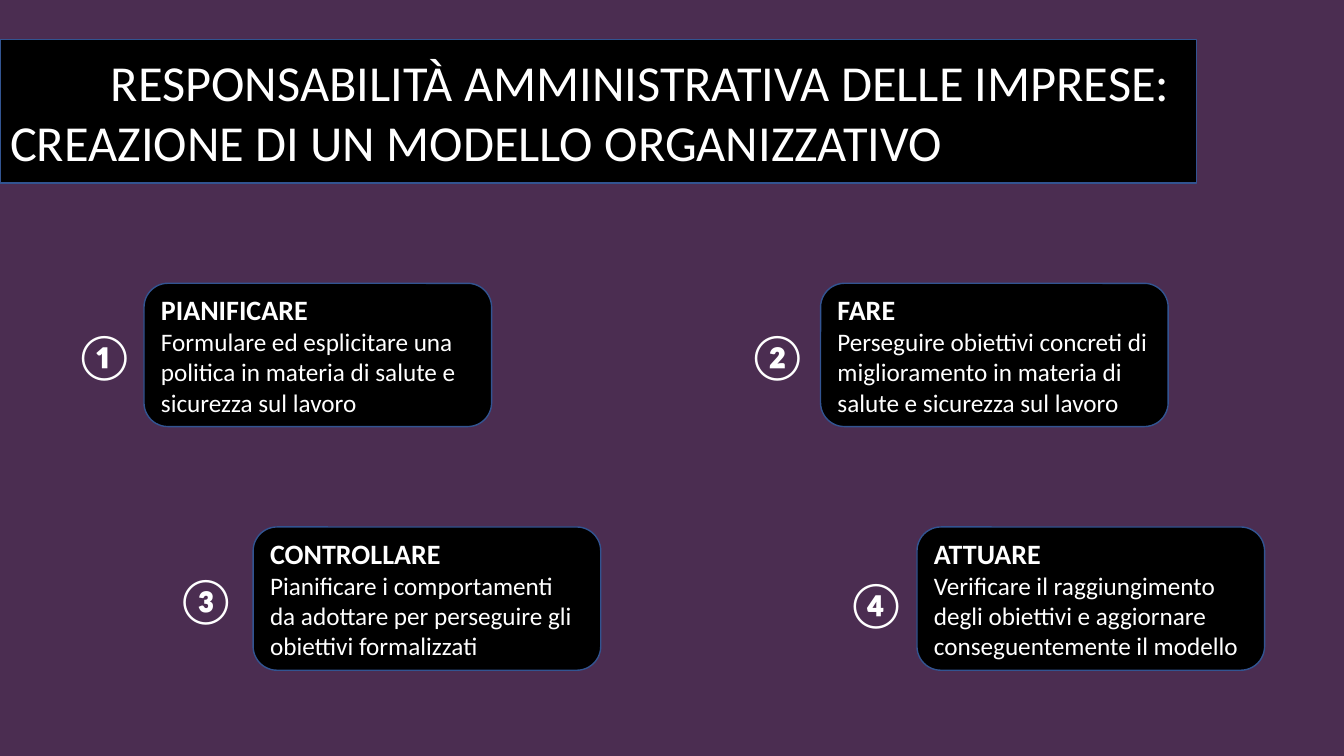
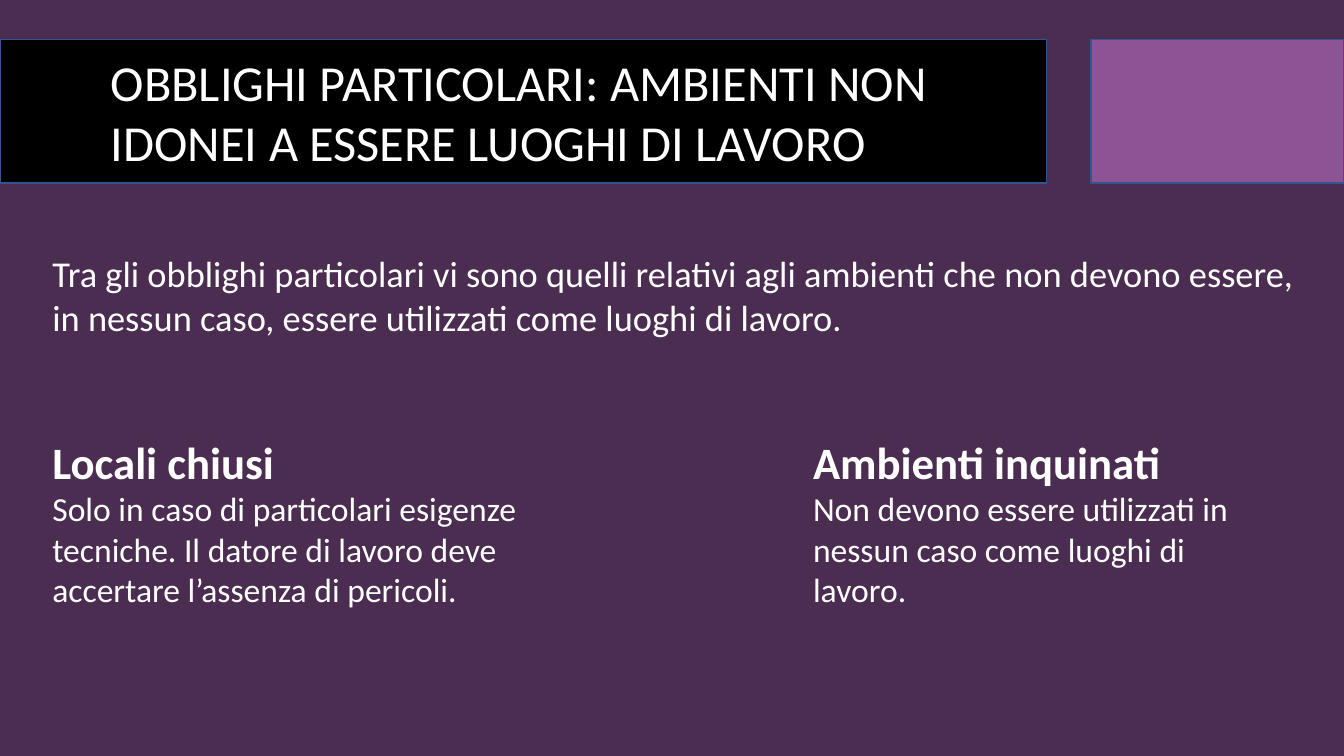
from pptx import Presentation
from pptx.dml.color import RGBColor
from pptx.enum.shapes import MSO_SHAPE
from pptx.enum.text import MSO_ANCHOR, MSO_AUTO_SIZE, PP_ALIGN
from pptx.util import Cm, Pt

RECT = MSO_SHAPE.RECTANGLE
ROUNDED = MSO_SHAPE.ROUNDED_RECTANGLE
MIDDLE = MSO_ANCHOR.MIDDLE
NO_AUTOFIT = MSO_AUTO_SIZE.NONE
LEFT = PP_ALIGN.LEFT

COLORS = {
    "background": "4B2D51",
    "panel": "000000",
    "accent": "8D5393",
    "outline": "325491",
    "text": "FFFFFF",
}
FONT = "Calibri"
PAGE_WIDTH, PAGE_HEIGHT = 33.87, 19.05
TITLE_ONLY = 5
BAND_TOP, BAND_HEIGHT = 1, 3.61
TITLE_INDENT = 2.54
CARD_WIDTH, CARD_HEIGHT = 8.76, 3.61
NUMBER_WIDTH, NUMBER_HEIGHT = 1.6, 1.63

# Heading, text, card left and top, number, number left and top
STEPS = [
    ("PIANIFICARE",
     "Formulare ed esplicitare una politica in materia di salute e sicurezza sul lavoro",
     3.63, 7.14, "①", 1.63, 8.13),
    ("FARE",
     "Perseguire obiettivi concreti di miglioramento in materia di salute e sicurezza sul lavoro",
     20.68, 7.14, "②", 18.59, 8.13),
    ("CONTROLLARE",
     "Pianificare i comportamenti da adottare per perseguire gli obiettivi formalizzati",
     6.38, 13.28, "③", 4.19, 14.27),
    ("ATTUARE",
     "Verificare il raggiungimento degli obiettivi e aggiornare conseguentemente il modello",
     23.11, 13.28, "④", 21.08, 14.38),
]

# Heading, text, left and width
PLACES = [
    ("Locali chiusi",
     "Solo in caso di particolari esigenze tecniche. "
     "Il datore di lavoro deve accertare l’assenza di pericoli.",
     1.07, 12.55),
    ("Ambienti inquinati",
     "Non devono essere utilizzati in nessun caso come luoghi di lavoro.",
     20.24, 11.6),
]


def color(name):
    return RGBColor.from_string(COLORS[name])


def paint(shape, fill):
    shape.fill.solid()
    shape.fill.fore_color.rgb = color(fill)
    shape.line.color.rgb = color("outline")
    shape.line.width = Pt(1)


def write(frame, lines):
    """Fill a text frame with (text, size, bold) paragraphs."""
    frame.word_wrap = True
    frame.text = "\n".join(text for text, _, _ in lines)
    for para, (_, size, bold) in zip(frame.paragraphs, lines):
        para.alignment = LEFT
        for span in para.runs:
            span.font.name = FONT
            span.font.size = Pt(size)
            span.font.bold = bold
            span.font.color.rgb = color("text")


def add_panel(page, kind, left, top, width, height, fill):
    panel = page.shapes.add_shape(kind, Cm(left), Cm(top), Cm(width), Cm(height))
    panel.shadow.inherit = False
    paint(panel, fill)
    return panel


def add_text(page, left, top, width, height, lines):
    box = page.shapes.add_textbox(Cm(left), Cm(top), Cm(width), Cm(height))
    write(box.text_frame, lines)


def add_page(deck, title_lines, band_width):
    """Add a page whose title is a black band with indented first lines."""
    page = deck.slides.add_slide(deck.slide_layouts[TITLE_ONLY])
    title = page.shapes.title
    title.left, title.top = Cm(0), Cm(BAND_TOP)
    title.width, title.height = Cm(band_width), Cm(BAND_HEIGHT)
    paint(title, "panel")
    frame = title.text_frame
    write(frame, [(line, 36, False) for line in title_lines])
    frame.auto_size = NO_AUTOFIT
    frame.vertical_anchor = MIDDLE
    for para in frame.paragraphs:
        para.line_spacing = 1.0
        para.space_before = Pt(0)
        properties = para._p.get_or_add_pPr()
        properties.set("marL", "0")
        properties.set("indent", str(Cm(TITLE_INDENT)))
    return page


def add_step(page, heading, text, left, top, number, number_left, number_top):
    card = add_panel(page, ROUNDED, left, top, CARD_WIDTH, CARD_HEIGHT, "panel")
    card.text_frame.vertical_anchor = MIDDLE
    write(card.text_frame, [(heading, 20, True), (text, 18, False)])
    add_text(page, number_left, number_top, NUMBER_WIDTH, NUMBER_HEIGHT,
             [(number, 32, True)])


def build_model_page(deck):
    page = add_page(deck, ["RESPONSABILITÀ AMMINISTRATIVA DELLE IMPRESE: "
                           "CREAZIONE DI UN MODELLO ORGANIZZATIVO"], 30.15)
    for step in STEPS:
        add_step(page, *step)


def build_places_page(deck):
    page = add_page(deck, ["OBBLIGHI PARTICOLARI: AMBIENTI NON",
                           "IDONEI A ESSERE LUOGHI DI LAVORO"], 26.37)
    # Accent block fills the rest of the title band
    accent_left = 27.5
    add_panel(page, RECT, accent_left, BAND_TOP, PAGE_WIDTH - accent_left,
              BAND_HEIGHT, "accent")
    add_text(page, 1.07, 6.2, 32.03, 2.49, [
        ("Tra gli obblighi particolari vi sono quelli relativi agli ambienti "
         "che non devono essere, in nessun caso, essere utilizzati come "
         "luoghi di lavoro.", 26, False)])
    for heading, text, left, width in PLACES:
        add_text(page, left, 10.82, width, 4.7,
                 [(heading, 32, True), (text, 24, False)])


def main():
    deck = Presentation()
    deck.slide_width, deck.slide_height = Cm(PAGE_WIDTH), Cm(PAGE_HEIGHT)
    # Shared background
    backdrop = deck.slide_master.background.fill
    backdrop.solid()
    backdrop.fore_color.rgb = color("background")
    build_model_page(deck)
    build_places_page(deck)
    deck.save("out.pptx")


if __name__ == "__main__":
    main()
